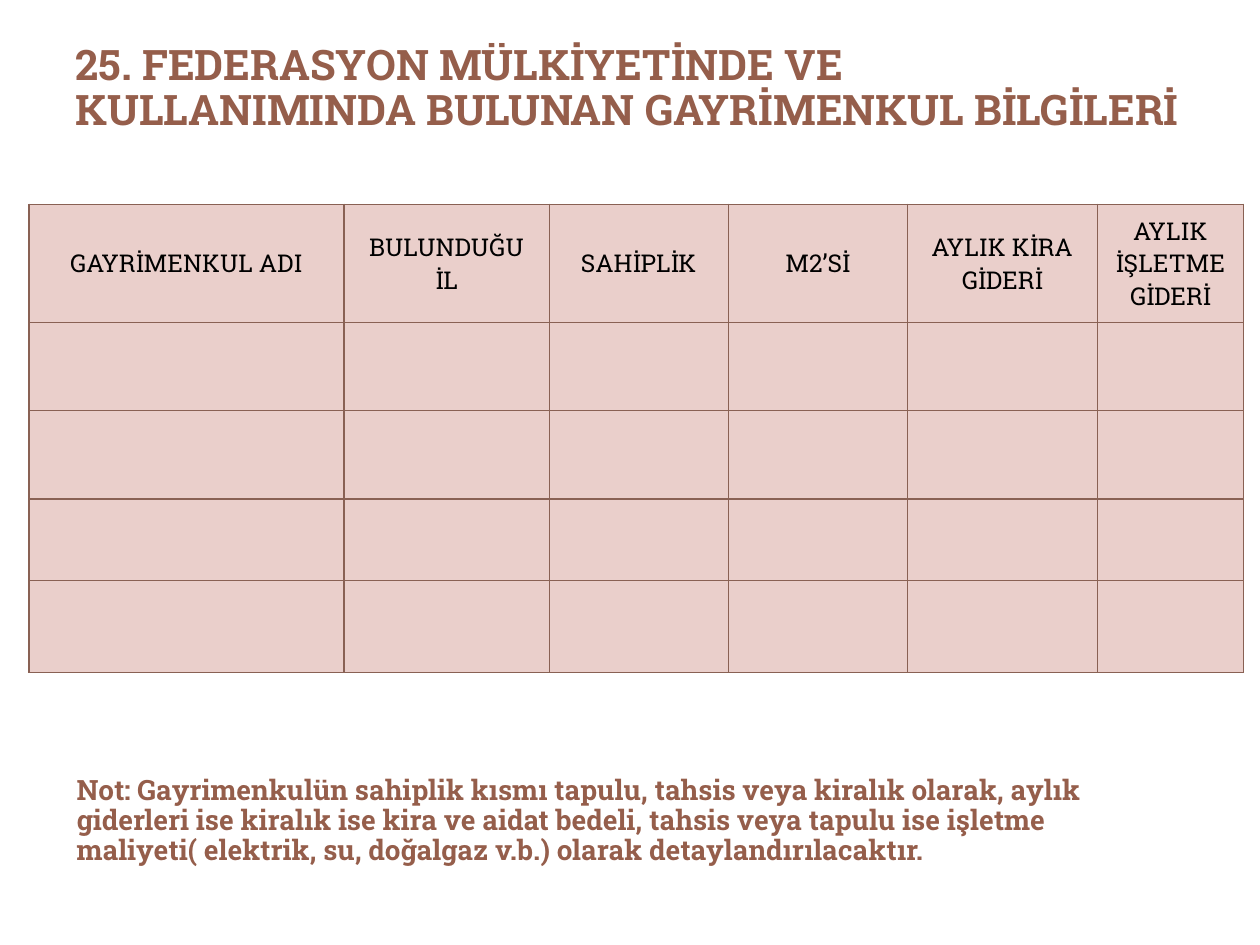
from dataclasses import dataclass

from lxml.etree import SubElement
from pptx import Presentation
from pptx.dml.color import RGBColor
from pptx.enum.text import MSO_ANCHOR, MSO_AUTO_SIZE, PP_ALIGN
from pptx.oxml.ns import qn
from pptx.util import Inches, Pt


@dataclass(frozen=True)
class Theme:
    font: str = "Roboto Slab"
    accent: str = "955E4B"
    text: str = "000000"
    cell: str = "EACFCB"
    border: str = "896154"
    border_width: float = 0.75
    title_size: int = 24
    header_size: int = 14
    note_size: int = 16


@dataclass(frozen=True)
class Column:
    header: str
    width: float


THEME = Theme()
TITLE = "25. FEDERASYON MÜLKİYETİNDE VE KULLANIMINDA BULUNAN GAYRİMENKUL BİLGİLERİ"
NOTE = (
    "Not: Gayrimenkulün sahiplik kısmı tapulu, tahsis veya kiralık olarak, "
    "aylık giderleri ise kiralık ise kira ve aidat bedeli, tahsis veya tapulu "
    "ise işletme maliyeti( elektrik, su, doğalgaz v.b.) olarak detaylandırılacaktır."
)
COLUMNS = [
    Column("GAYRİMENKUL ADI", 2.5),
    Column("BULUNDUĞU İL", 1.63),
    Column("SAHİPLİK", 1.42),
    Column("M2’Sİ", 1.42),
    Column("AYLIK KİRA GİDERİ", 1.51),
    Column("AYLIK İŞLETME GİDERİ", 1.16),
]
ROW_HEIGHTS = [0.94, 0.7, 0.7, 0.65, 0.73]


def set_font(p, size: int, color: str, bold: bool = False) -> None:
    p.font.name = THEME.font
    p.font.size = Pt(size)
    p.font.bold = bold
    p.font.color.rgb = RGBColor.from_string(color)


def write_text(sp, text: str, size: int) -> None:
    tf = sp.text_frame
    tf.text = text
    tf.word_wrap = True
    tf.auto_size = MSO_AUTO_SIZE.NONE
    tf.vertical_anchor = MSO_ANCHOR.TOP
    p = tf.paragraphs[0]
    p.alignment = PP_ALIGN.LEFT
    p.line_spacing = 0.9
    set_font(p, size, THEME.accent, bold=True)


def style_cell(cell) -> None:
    tc_pr = cell._tc.get_or_add_tcPr()
    for side in ("lnL", "lnR", "lnT", "lnB"):
        ln = SubElement(tc_pr, qn(f"a:{side}"), w=str(Pt(THEME.border_width)))
        fill = SubElement(ln, qn("a:solidFill"))
        SubElement(fill, qn("a:srgbClr"), val=THEME.border)
    cell.fill.solid()
    cell.fill.fore_color.rgb = RGBColor.from_string(THEME.cell)
    cell.vertical_anchor = MSO_ANCHOR.MIDDLE
    p = cell.text_frame.paragraphs[0]
    p.alignment = PP_ALIGN.CENTER
    set_font(p, THEME.header_size, THEME.text)


def add_property_table(s, left: float, top: float) -> None:
    width = sum(column.width for column in COLUMNS)
    table = s.shapes.add_table(
        len(ROW_HEIGHTS), len(COLUMNS),
        Inches(left), Inches(top), Inches(width), Inches(sum(ROW_HEIGHTS)),
    ).table
    for i, column in enumerate(COLUMNS):
        table.columns[i].width = Inches(column.width)
        table.cell(0, i).text = column.header
    for row, height in zip(table.rows, ROW_HEIGHTS):
        row.height = Inches(height)
    for cell in table.iter_cells():
        style_cell(cell)


def main() -> None:
    prs = Presentation()
    prs.slide_width, prs.slide_height = Inches(10), Inches(7.5)
    s = prs.slides.add_slide(prs.slide_layouts[5])

    title = s.shapes.title
    title.left, title.top = Inches(0.5), Inches(0.3)
    title.width, title.height = Inches(9), Inches(1.25)
    write_text(title, TITLE, THEME.title_size)

    add_property_table(s, 0.23, 1.62)

    note = s.shapes.add_textbox(Inches(0.51), Inches(6.11), Inches(9), Inches(0.77))
    write_text(note, NOTE, THEME.note_size)

    prs.save("out.pptx")


if __name__ == "__main__":
    main()
